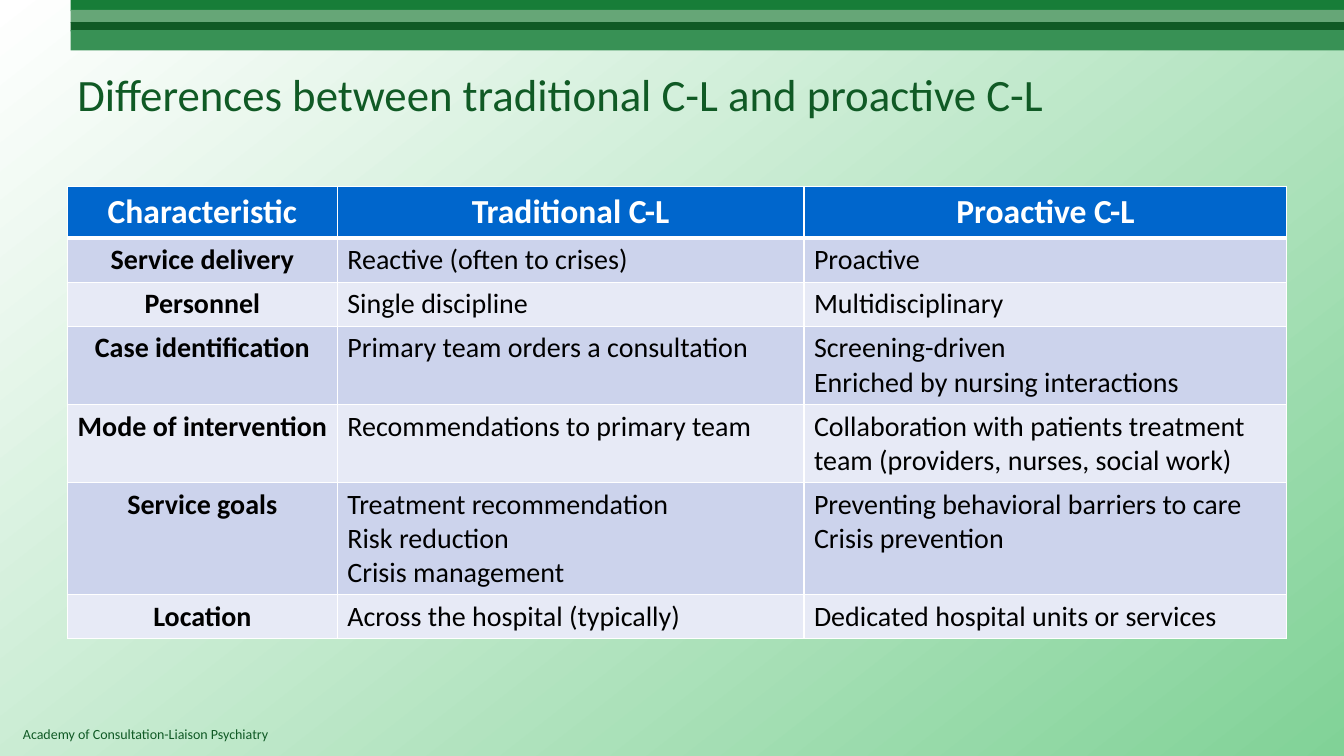
from lxml import etree
from pptx import Presentation
from pptx.dml.color import RGBColor
from pptx.enum import shapes as kinds, text as txt
from pptx.oxml import ns
from pptx.util import Cm, Pt

TITLE = "Differences between traditional C-L and proactive C-L"
FOOTER = "Academy of Consultation-Liaison Psychiatry"
HEADS = ["Characteristic", "Traditional C-L", "Proactive C-L"]
ROWS = [
    ("Service delivery", ["Reactive (often to crises)"], ["Proactive"], 1),
    ("Personnel", ["Single discipline"], ["Multidisciplinary"], 1),
    ("Case identification", ["Primary team orders a consultation"],
     ["Screening-driven", "Enriched by nursing interactions"], 2),
    ("Mode of intervention", ["Recommendations to primary team"],
     ["Collaboration with patients treatment team (providers, nurses, social work)"], 2),
    ("Service goals", ["Treatment recommendation", "Risk reduction", "Crisis management"],
     ["Preventing behavioral barriers to care", "Crisis prevention"], 3),
    ("Location", ["Across the hospital (typically)"],
     ["Dedicated hospital units or services"], 1),
]
BARS = [(0, 0.28, "177D38"), (0.25, 0.33, "66A677"),
        (0.56, 0.23, "105A25"), (0.76, 0.51, "389155")]
COLS = [6.8, 11.76, 12.17]
THEME = {
    "font": "Calibri", "title": 32, "head": 24, "body": 20, "foot": 10,
    "green": "105A25", "blue": "0066CC", "white": "FFFFFF", "black": "000000",
    "bands": ["CCD3EC", "E7EAF6"], "back": ["FFFFFF", "81D297"],
}
WIDE, HIGH = 33.87, 19.05


def rgb(code):
    return RGBColor.from_string(code)


def write(frame, lines, size, color, bold=False, align=txt.PP_ALIGN.LEFT):
    for i, line in enumerate(lines):
        para = frame.add_paragraph() if i else frame.paragraphs[0]
        para.text = line
        para.alignment = align
        font = para.font
        font.name, font.size, font.bold = THEME["font"], Pt(size), bold
        font.color.rgb = rgb(color)


def label(slide, place, line, size, anchor):
    frame = slide.shapes.add_textbox(*map(Cm, place)).text_frame
    frame.word_wrap = True
    frame.vertical_anchor = anchor
    write(frame, [line], size, THEME["green"])


def edge(cell, widths):
    props = cell._tc.get_or_add_tcPr()
    for i, (side, width) in enumerate(widths.items()):
        line = etree.Element(ns.qn("a:" + side), w=str(Pt(width)))
        fill = etree.SubElement(line, ns.qn("a:solidFill"))
        etree.SubElement(fill, ns.qn("a:srgbClr"), val=THEME["white"])
        props.insert(i, line)


def paint(slide):
    fill = slide.background.fill
    fill.gradient()
    fill.gradient_angle = 308
    for stop, code in zip(fill.gradient_stops, THEME["back"]):
        stop.color.rgb = rgb(code)
    left = 1.78
    for top, high, code in BARS:
        bar = slide.shapes.add_shape(kinds.MSO_SHAPE.RECTANGLE, Cm(left), Cm(top),
                                     Cm(WIDE - left), Cm(high))
        bar.shadow.inherit = False
        bar.fill.solid()
        bar.fill.fore_color.rgb = rgb(code)
        bar.line.fill.background()


def fill_table(slide):
    highs = [1.3] + [0.25 + 0.86 * row[3] for row in ROWS]
    table = slide.shapes.add_table(len(highs), len(COLS), Cm(1.7), Cm(4.7),
                                   Cm(sum(COLS)), Cm(sum(highs))).table
    for col, wide in zip(table.columns, COLS):
        col.width = Cm(wide)
    for row, high in zip(table.rows, highs):
        row.height = Cm(high)
    grid = [[[head] for head in HEADS]] + [[[name], old, new] for name, old, new, _ in ROWS]
    for r, row in enumerate(grid):
        head = r == 0
        size, color = ((THEME["head"], THEME["white"]) if head
                       else (THEME["body"], THEME["black"]))
        for c, lines in enumerate(row):
            cell = table.cell(r, c)
            bold = head or c == 0
            align = txt.PP_ALIGN.CENTER if bold else txt.PP_ALIGN.LEFT
            write(cell.text_frame, lines, size, color, bold, align)
            cell.fill.solid()
            cell.fill.fore_color.rgb = rgb(THEME["blue"] if head else THEME["bands"][(r - 1) % 2])
            edge(cell, {"lnL": 1, "lnR": 1, "lnT": 3 if r == 1 else 1, "lnB": 3 if head else 1})


def main():
    deck = Presentation()
    deck.slide_width, deck.slide_height = Cm(WIDE), Cm(HIGH)
    slide = deck.slides.add_slide(deck.slide_layouts[6])
    paint(slide)
    label(slide, (0.33, 18.16, 23.5, 0.69), FOOTER, THEME["foot"], txt.MSO_ANCHOR.TOP)
    label(slide, (1.7, 0.76, 30.48, 3.18), TITLE, THEME["title"], txt.MSO_ANCHOR.MIDDLE)
    fill_table(slide)
    deck.save("out.pptx")


if __name__ == "__main__":
    main()
